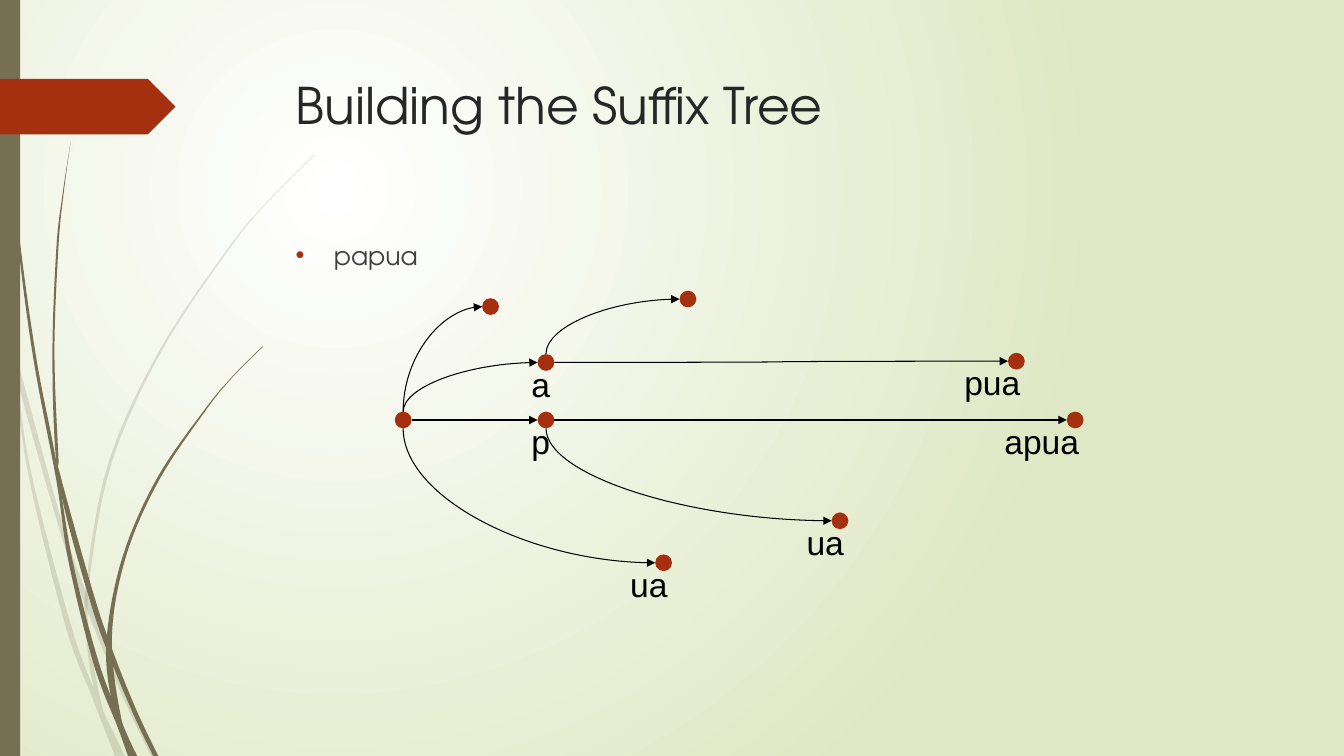
from lxml import etree
from pptx import Presentation
from pptx import util as u
from pptx.dml.color import RGBColor
from pptx.enum import shapes, text
from pptx.oxml.ns import qn

COLUMNS, ROWS = 160, 90
CELL = u.Inches(7.5) / ROWS
INCH = u.Inches(1)
COLORS = {"olive": "766F54", "rust": "A53010", "title": "262626", "body": "404040",
          "black": "000000", "glow": "FFFFFF", "edge": "DFE8C4"}
HEADING_FONT = "TeX Gyre Adventor"

NODES = {
    "root": (48, 50, ""), "p": (65, 50, "p"), "apua": (128, 50, "apua"),
    "a": (65, 43.15, "a"), "pua": (121, 43, "pua"),
    "p-ua": (100, 62, "ua"), "ua": (79, 67, "ua"),
    "a-end": (81.9, 35.6, ""), "root-end": (58.4, 36.5, ""),
}
STRAIGHT_EDGES = [("root", "p"), ("p", "apua")]
BENT_EDGES = [("root", "a"), ("root", "root-end"), ("root", "ua"),
              ("p", "p-ua"), ("a", "a-end")]

PALE_BLADES = [
    ([(0, 2.99), (.11, 3.5), (.28, 4.7), (.65, 6.21), (.92, 6.93), (1.14, 7.5)],
     [(0, 2.82), (.09, 3.22), (.17, 3.76), (.31, 4.69), (.7, 6.19), (.93, 6.83),
      (1.05, 7.11), (1.24, 7.5)]),
    ([(.14, 3.45), (.17, 3.76), (.58, 5.22), (.84, 5.99), (1.23, 6.94), (1.5, 7.5)],
     [(.14, 3.45), (.62, 5.2), (.85, 5.86), (1.27, 6.92), (1.55, 7.5)]),
    ([(3.12, 1.53), (2.68, 1.97), (2.28, 2.44), (1.58, 3.48), (1.07, 4.61),
      (.85, 5.84), (.87, 6.46), (.93, 6.83)],
     [(3.12, 1.54), (2.68, 1.98), (2.29, 2.45), (1.6, 3.49), (1.1, 4.62),
      (.88, 5.84), (.91, 6.46), (1.02, 7.05)]),
]
DARK_BLADES = [
    ([(.03, 0), (.07, 1.1), (.17, 2.33), (.33, 3.55), (.56, 4.77), (.68, 5.57),
      (.93, 6.59), (1.17, 7.22), (1.27, 7.5)],
     [(.04, 0), (.08, 1.09), (.19, 2.32), (.36, 3.55), (.55, 4.53), (.72, 5.56),
      (.98, 6.57), (1.22, 7.19), (1.36, 7.5)]),
    ([(.7, 1.41), (.62, 1.93), (.56, 2.45), (.52, 3.49), (.55, 4.49), (.64, 5.05),
      (.88, 5.92), (1.06, 6.45), (1.32, 7.08), (1.52, 7.5)],
     [(.7, 1.41), (.63, 1.93), (.58, 2.45), (.54, 3.49), (.58, 4.53), (.6, 4.72),
      (.93, 5.9), (1.13, 6.49), (1.36, 7.06), (1.57, 7.5)]),
    ([(2.6, 3.44), (2.31, 3.73), (2.04, 4.05), (1.56, 4.74), (1.22, 5.51),
      (1.06, 6.31), (1.1, 6.91), (1.3, 7.5)],
     [(2.61, 3.44), (2.31, 3.74), (2.05, 4.06), (1.58, 4.76), (1.25, 5.52),
      (1.11, 6.33), (1.21, 7.16), (1.36, 7.5)]),
]


def cells(*counts):
    return [round(count * CELL) for count in counts]


def rgb(name):
    return RGBColor.from_string(COLORS[name])


def apply(target, formats):
    for key, value in formats.items():
        setattr(target, key, value)


def add_xml(parent, tag, **attributes):
    return etree.SubElement(parent, qn(tag), attributes)


def paint(shape, color):
    shape.shadow.inherit = False
    shape.fill.solid()
    shape.fill.fore_color.rgb = rgb(color)
    shape.line.fill.background()


def add_preset(slide, kind, place, color):
    shape = slide.shapes.add_shape(kind, *cells(*place))
    paint(shape, color)
    return shape


def write(frame, words, size, font, color):
    paragraph = frame.paragraphs[0]
    run = paragraph.add_run()
    apply(run, {"text": words})
    apply(run.font, {"size": u.Pt(size), "name": font})
    run.font.color.rgb = rgb(color)
    return paragraph


def add_heading_text(slide, place, words, size, color):
    frame = slide.shapes.add_textbox(*cells(*place)).text_frame
    apply(frame, {"word_wrap": True, "vertical_anchor": text.MSO_ANCHOR.TOP})
    return write(frame, words, size, HEADING_FONT, color)


def add_bullet(paragraph, color):
    paragraph.space_before = u.Pt(10)
    properties = paragraph._p.get_or_add_pPr()
    indent = u.Inches(0.38)
    properties.set("marL", str(indent))
    properties.set("indent", str(-indent))
    add_xml(add_xml(properties, "a:buClr"), "a:srgbClr", val=COLORS[color])
    add_xml(properties, "a:buFont", typeface="Arial")
    add_xml(properties, "a:buChar", char="•")


def smooth(points, steps=8):
    padded = [points[0], *points, points[-1]]
    curve = [points[0]]
    for before, start, end, after in zip(padded, padded[1:], padded[2:], padded[3:]):
        for step in range(1, steps + 1):
            t = step / steps
            curve.append(tuple(
                0.5 * (2 * b + (c - a) * t + (2 * a - 5 * b + 4 * c - d) * t ** 2
                       + (3 * b - a - 3 * c + d) * t ** 3)
                for a, b, c, d in zip(before, start, end, after)))
    return curve


def add_blade(slide, left_edge, right_edge, alpha=None):
    outline = [(x * INCH, y * INCH)
               for x, y in smooth(left_edge) + smooth(right_edge)[::-1]]
    builder = slide.shapes.build_freeform(*outline[0])
    builder.add_line_segments(outline[1:], close=True)
    blade = builder.convert_to_shape()
    paint(blade, "olive")
    if alpha:
        tint = blade.element.spPr.find(qn("a:solidFill"))[0]
        add_xml(tint, "a:alpha", val=str(alpha * 1000))


def add_node(slide, column, row, label):
    node = add_preset(slide, shapes.MSO_SHAPE.OVAL, (column - 1, row - 1, 2, 2), "rust")
    if label:
        frame = node.text_frame
        apply(frame, {"margin_left": u.Inches(0.1), "margin_top": u.Inches(0.1),
                      "margin_right": u.Inches(1), "margin_bottom": u.Inches(0.05),
                      "word_wrap": False, "vertical_anchor": text.MSO_ANCHOR.TOP})
        write(frame, label, 24, "Arial", "black").alignment = text.PP_ALIGN.RIGHT


def add_arrow(slide, kind, start, end):
    arrow = slide.shapes.add_connector(kind, *cells(*start, *end))
    arrow.line.color.rgb = rgb("black")
    arrow.line.width = u.Pt(0.75)
    add_xml(arrow.line._get_or_add_ln(), "a:tailEnd", type="triangle")
    add_xml(arrow.element.spPr, "a:effectLst")
    return arrow


def add_side_arrow(slide, kind, source, target):
    (x1, y1, _), (x2, y2, _) = NODES[source], NODES[target]
    add_arrow(slide, kind, (x1 + 1, y1), (x2 - 1, y2))


def add_bent_arrow(slide, source, target):
    (x1, y1, _), (x2, y2, _) = NODES[source], NODES[target]
    y1 += 1 if y2 > y1 else -1
    x2 -= 1
    middle_x, middle_y = (x1 + x2) / 2, (y1 + y2) / 2
    half_rise, half_run = (y1 - y2) / 2, (x2 - x1) / 2
    arrow = add_arrow(slide, shapes.MSO_CONNECTOR.CURVE,
                      (middle_x - half_rise, middle_y - half_run),
                      (middle_x + half_rise, middle_y + half_run))
    arrow.element.spPr.find(qn("a:xfrm")).set("rot", str(270 * 60000))
    arrow.element.spPr.find(qn("a:prstGeom")).set("prst", "curvedConnector2")


def add_background(slide):
    fill = slide.background.fill
    fill.gradient()
    for stop, color in zip(fill.gradient_stops, ("glow", "edge")):
        stop.color.rgb = rgb(color)
    for stop, position in zip(fill.gradient_stops, (0, 1)):
        stop.position = position
    gradient = slide.element.find(".//" + qn("a:gradFill"))
    gradient.remove(gradient.find(qn("a:lin")))
    glow = add_xml(gradient, "a:path", path="circle")
    add_xml(glow, "a:fillToRect", l="50000", t="50000", r="100000", b="100000")


def main():
    deck = Presentation()
    deck.slide_width, deck.slide_height = cells(COLUMNS, ROWS)
    slide = deck.slides.add_slide(deck.slide_layouts[6])
    add_background(slide)
    for edges in PALE_BLADES:
        add_blade(slide, *edges, alpha=20)
    for edges in DARK_BLADES:
        add_blade(slide, *edges)
    add_preset(slide, shapes.MSO_SHAPE.RECTANGLE, (0, 0, 2.4, ROWS), "olive")
    add_preset(slide, shapes.MSO_SHAPE.PENTAGON, (0, 9.4, 20.9, 6.6), "rust")
    add_heading_text(slide, (34, 8.2, 117, 16.8), "Building the Suffix Tree", 36, "title")
    add_bullet(add_heading_text(slide, (34, 28, 117, 49.5), "papua", 18, "body"), "rust")
    for node in NODES.values():
        add_node(slide, *node)
    for edge in STRAIGHT_EDGES:
        add_side_arrow(slide, shapes.MSO_CONNECTOR.STRAIGHT, *edge)
    add_side_arrow(slide, shapes.MSO_CONNECTOR.CURVE, "a", "pua")
    for edge in BENT_EDGES:
        add_bent_arrow(slide, *edge)
    deck.save("out.pptx")


if __name__ == "__main__":
    main()
